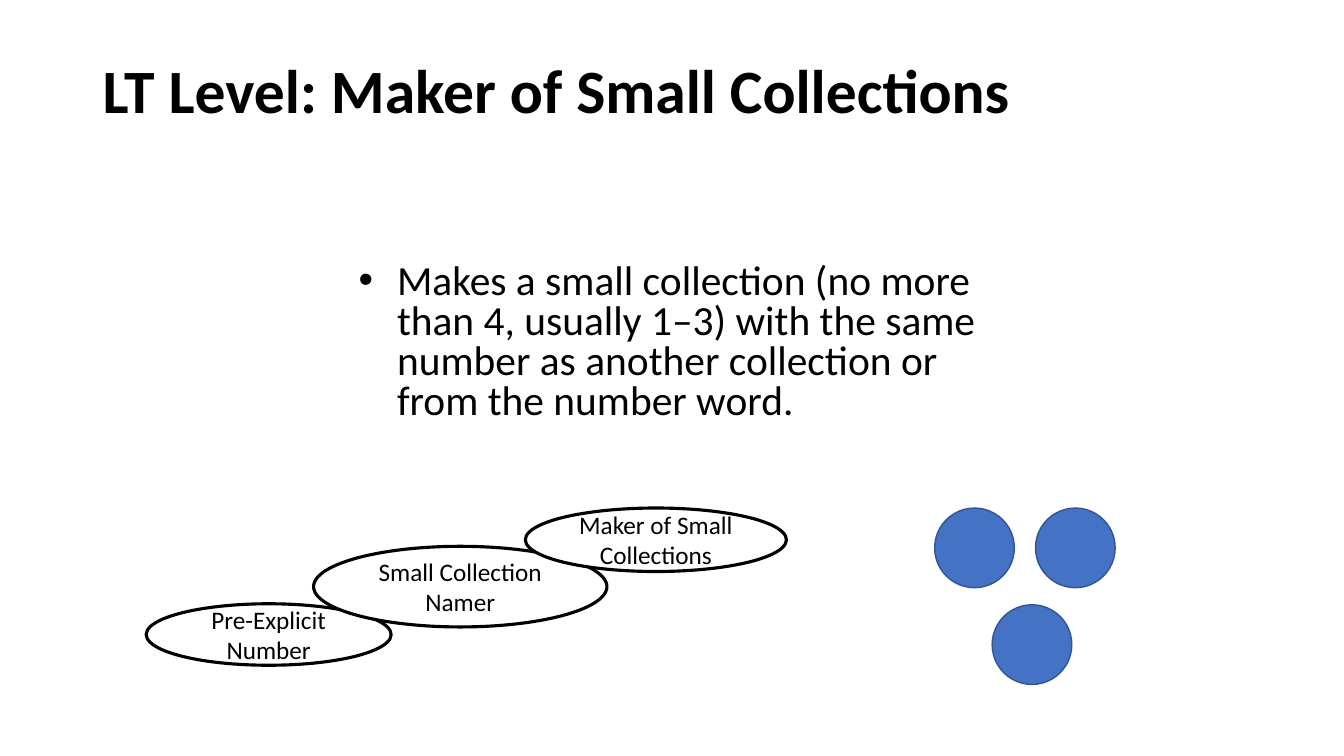
from dataclasses import dataclass

from lxml import etree
from pptx import Presentation
from pptx.dml.color import RGBColor
from pptx.enum.shapes import MSO_SHAPE
from pptx.enum.text import MSO_ANCHOR, PP_ALIGN
from pptx.oxml.ns import qn
from pptx.util import Inches, Pt

OVAL = MSO_SHAPE.OVAL
LEFT, CENTER = PP_ALIGN.LEFT, PP_ALIGN.CENTER
TOP, MIDDLE = MSO_ANCHOR.TOP, MSO_ANCHOR.MIDDLE
FONT = "Calibri"
BLACK, WHITE = "000000", "FFFFFF"
BLUE, DARK_BLUE = "4472C4", "325491"
DOT_SIZE = 0.79


@dataclass
class Oval:
    x: float
    y: float
    w: float
    h: float
    text: str = ""
    fill: str = WHITE
    line: str = BLACK
    weight: float = 2.25


LEVELS = [
    Oval(1.45, 5.99, 2.43, 0.61, "Pre-Explicit Number"),
    Oval(3.11, 5.42, 2.91, 0.8, "Small Collection Namer"),
    Oval(5.21, 5.04, 2.59, 0.63, "Maker of Small Collections"),
]
DOTS = [
    Oval(x, y, DOT_SIZE, DOT_SIZE, fill=BLUE, line=DARK_BLUE, weight=1)
    for x, y in [(9.27, 5.04), (10.27, 5.04), (9.84, 6)]
]


def color(value: str) -> RGBColor:
    return RGBColor.from_string(value)


def write_text(sp, text: str, *, size: float, bold: bool = False,
               align=LEFT, anchor=TOP, spacing: float = 1.0,
               margins: tuple = (0.1, 0.05), bullet_indent: float = 0) -> None:
    tf = sp.text_frame
    tf.word_wrap = True
    tf.vertical_anchor = anchor
    tf.margin_left = tf.margin_right = Inches(margins[0])
    tf.margin_top = tf.margin_bottom = Inches(margins[1])
    p = tf.paragraphs[0]
    p.alignment = align
    p.line_spacing = spacing
    if bullet_indent:
        pPr = p._p.get_or_add_pPr()
        pPr.set("marL", str(Inches(bullet_indent)))
        pPr.set("indent", str(-Inches(bullet_indent)))
        etree.SubElement(pPr, qn("a:buFont")).set("typeface", "Arial")
        etree.SubElement(pPr, qn("a:buChar")).set("char", "•")
    r = p.add_run()
    r.text = text
    r.font.name = FONT
    r.font.size = Pt(size)
    r.font.bold = bold
    r.font.color.rgb = color(BLACK)


def add_text(slide, x: float, y: float, w: float, h: float, text: str,
             **fmt) -> None:
    sp = slide.shapes.add_textbox(Inches(x), Inches(y), Inches(w), Inches(h))
    write_text(sp, text, **fmt)


def add_oval(slide, oval: Oval) -> None:
    sp = slide.shapes.add_shape(OVAL, Inches(oval.x), Inches(oval.y),
                                Inches(oval.w), Inches(oval.h))
    sp.shadow.inherit = False
    sp.fill.solid()
    sp.fill.fore_color.rgb = color(oval.fill)
    sp.line.color.rgb = color(oval.line)
    sp.line.width = Pt(oval.weight)
    if oval.text:
        write_text(sp, oval.text, size=18, align=CENTER, anchor=MIDDLE,
                   margins=(0.08, 0.04))


def main() -> None:
    prs = Presentation()
    prs.slide_width, prs.slide_height = Inches(13.33), Inches(7.5)
    slide = prs.slides.add_slide(prs.slide_layouts[6])
    add_text(slide, 3.46, 2.57, 6.77, 1.89,
             "Makes a small collection (no more than 4, usually 1–3) with the "
             "same number as another collection or from the number word.",
             size=29.6, spacing=0.8, bullet_indent=0.38)
    add_text(slide, 0.92, 0.4, 11.5, 1.05,
             "LT Level: Maker of Small Collections",
             size=44, bold=True, anchor=MIDDLE, spacing=0.9)
    for oval in LEVELS + DOTS:
        add_oval(slide, oval)
    prs.save("out.pptx")


if __name__ == "__main__":
    main()
